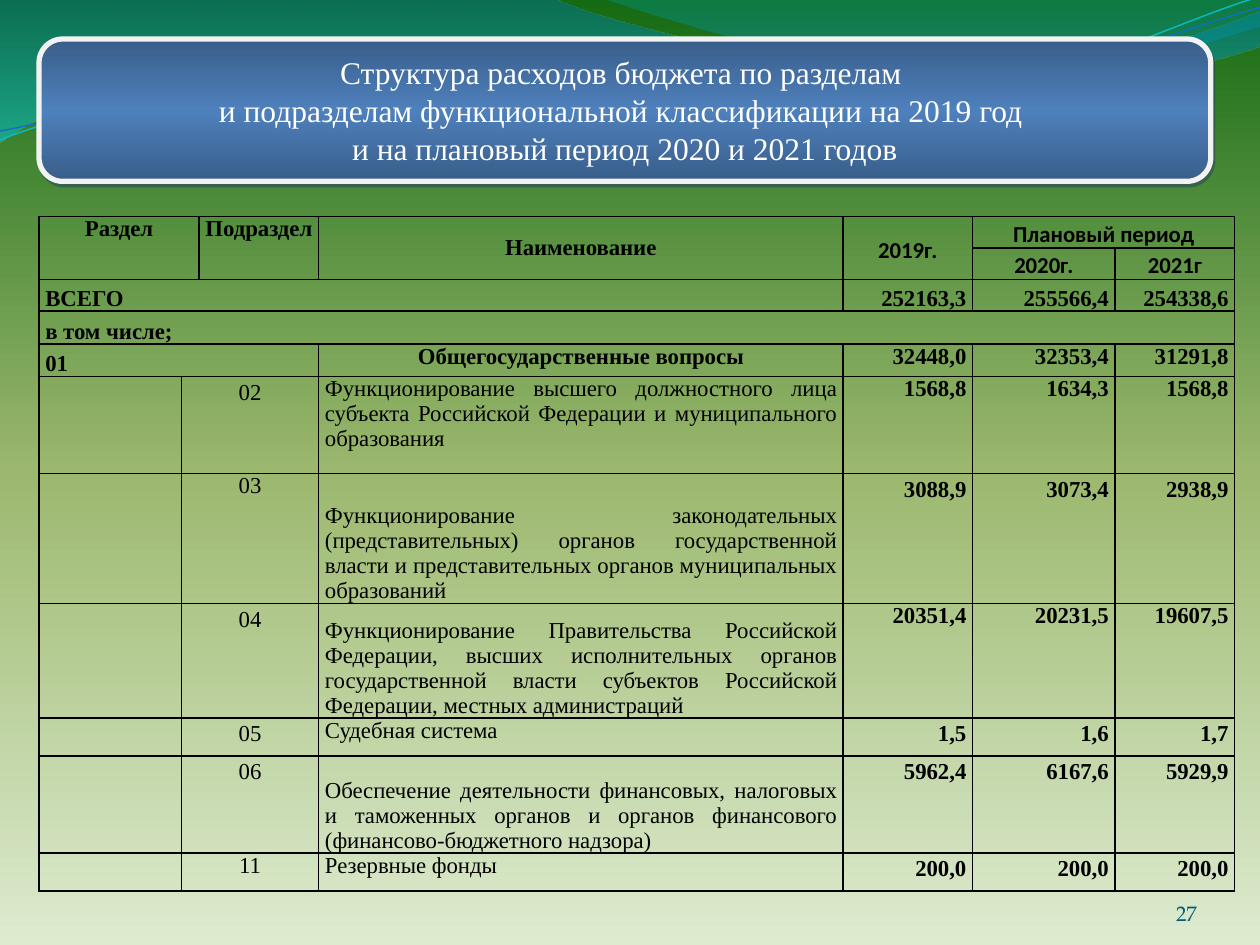
import pptx
import pptx.dml.color
import pptx.enum.shapes
import pptx.enum.text
import pptx.oxml
import pptx.oxml.ns
import pptx.util
from lxml import etree

Inches, Pt = pptx.util.Inches, pptx.util.Pt
ALIGN, ANCHOR = pptx.enum.text.PP_ALIGN, pptx.enum.text.MSO_ANCHOR
rgb = pptx.dml.color.RGBColor.from_string
qn = pptx.oxml.ns.qn
NS = pptx.oxml.ns.nsdecls("a")


def set_gradient(properties, stops, angle):
    """Replace a solid fill by a gradient; stops are (position, colour, effect, percent)."""
    marks = "".join(
        f'<a:gs pos="{pos * 1000}"><a:srgbClr val="{colour}">'
        f'<a:{effect} val="{percent * 1000}"/></a:srgbClr></a:gs>'
        for pos, colour, effect, percent in stops)
    properties.replace(properties.find(qn("a:solidFill")), pptx.oxml.parse_xml(
        f'<a:gradFill {NS} rotWithShape="1"><a:gsLst>{marks}</a:gsLst>'
        f'<a:lin ang="{angle * 60000}" scaled="0"/></a:gradFill>'))


def add_wave(segments):
    """Outline of line ends (x, y) and Bezier segments (x1, y1, x2, y2, x, y)."""
    points = [(Inches(s[i]), Inches(s[i + 1])) for s in segments for i in range(0, len(s), 2)]
    builder = slide.shapes.build_freeform(*points[0])
    builder.add_line_segments(points[1:], close=False)
    shape = builder.convert_to_shape()
    lines = iter(list(shape._element.iter(qn("a:lnTo"))))
    for segment in segments[1:]:
        first = next(lines)
        if len(segment) == 6:
            first.tag = qn("a:cubicBezTo")
            for _ in range(2):
                other = next(lines)
                first.append(other[0])
                other.getparent().remove(other)
    return shape


presentation = pptx.Presentation()
presentation.slide_width, presentation.slide_height = Inches(10), Inches(7.5)
slide = presentation.slides.add_slide(presentation.slide_layouts[6])

# Background
slide.background.fill.solid()
set_gradient(slide._element.find(".//" + qn("p:bgPr")),
             [(0, "DDEBCF", "alpha", 100), (50, "9CB86E", "alpha", 100),
              (100, "156B13", "alpha", 100)], 270)

# Waves along the top: outline, gradient stops, line colour, line width
waves = [
    ([(0, -0.01), (4.4, -0.01), (4.76, 0.17, 6.64, 0.63, 7.58, 0.63),
      (8.53, 0.63, 9.58, 0.26, 10, 0.09), (10.01, 0.36),
      (9.83, 0.44, 8.7, 0.76, 7.46, 0.75), (6.22, 0.75, 3.82, 0.28, 2.57, 0.34),
      (1.29, 0.35, 0.46, 0.83, -0.01, 1.13), (0, -0.01)],
     [(0, "0074A1", "alpha", 45), (100, "00C6CF", "alpha", 55)], None, None),
    ([(4.79, -0.01), (5.09, 0.11, 6.82, 0.62, 7.69, 0.65),
      (8.56, 0.69, 9.61, 0.32, 10, 0.21), (10, 0), (4.79, -0.01)],
     [(0, "00A1A9", "alpha", 30), (80, "008BBF", "alpha", 45)], None, None),
    ([(0, 1.11), (0.48, 0.93, 1.58, 0.57, 2.77, 0.52),
      (3.95, 0.47, 5.93, 0.89, 7.13, 0.8), (8.33, 0.71, 9.38, 0.15, 9.98, -0.02)],
     None, "0AB8BF", 0.85),
    ([(0, 1.04), (0.47, 0.96, 1.64, 0.61, 2.83, 0.56),
      (4.03, 0.51, 5.97, 0.83, 7.17, 0.75), (8.36, 0.67, 9.41, 0.21, 10, 0.06)],
     None, "0F6FC6", 0.75),
]
for outline, stops, line_colour, line_width in waves:
    wave = add_wave(outline)
    wave.shadow.inherit = False
    if stops:
        wave.fill.solid()
        set_gradient(wave._element.spPr, stops, 90)
        wave.line.fill.background()
    else:
        wave.fill.background()
        wave.line.color.rgb = rgb(line_colour)
        wave.line.width = Pt(line_width)

# Page number
page_number = slide.shapes.add_textbox(Inches(8.67), Inches(6.95), Inches(0.83), Inches(0.4))
frame = page_number.text_frame
frame.word_wrap = True
frame.vertical_anchor = ANCHOR.BOTTOM
frame.margin_left = frame.margin_right = frame.margin_top = frame.margin_bottom = 0
frame.text = "27"
number = frame.paragraphs[0]
number.alignment = ALIGN.RIGHT
number.font.size, number.font.name = Pt(12), "TeX Gyre Pagella"
number.font.color.rgb = rgb("045D75")

# Title on a rounded plate; a placeholder would be drawn with square corners
title = slide.shapes.add_shape(pptx.enum.shapes.MSO_SHAPE.FLOWCHART_ALTERNATE_PROCESS,
                               Inches(0.31), Inches(0.31), Inches(9.3), Inches(1.13))
plate = title._element.spPr
title.fill.solid()
set_gradient(plate, [(0, "4F81BD", "shade", 49), (50, "4F81BD", "shade", 100),
                     (100, "4F81BD", "shade", 49)], 90)
title.line.color.rgb = rgb("F2F2F2")
title.line.width = Pt(3)
plate.append(pptx.oxml.parse_xml(
    f'<a:effectLst {NS}><a:outerShdw dist="{Pt(2.2)}" dir="{63 * 60000}" algn="ctr" '
    'rotWithShape="0"><a:srgbClr val="243F60"><a:alpha val="50000"/></a:srgbClr>'
    '</a:outerShdw></a:effectLst>'))
title.text_frame.text = ("Структура расходов бюджета по разделам \n"
                         "и подразделам функциональной классификации на 2019 год \n"
                         "и на плановый период 2020 и 2021 годов")
title.text_frame.vertical_anchor = ANCHOR.MIDDLE
for line in title.text_frame.paragraphs:
    line.alignment = ALIGN.CENTER
    line.font.size, line.font.name = Pt(18), "Times New Roman"
    line.font.color.rgb = rgb("FFFFFF")

# Budget table
column_widths = [1.13, 0.11, 0.95, 4.16, 1.03, 1.13, 0.95]
row_heights = [0.25, 0.25, 0.25, 0.26, 0.26, 0.77, 1.03, 0.91, 0.3, 0.77, 0.3]
table_frame = slide.shapes.add_table(len(row_heights), len(column_widths), Inches(0.31),
                                     Inches(1.72), Inches(9.45), Inches(5.35))
budget = table_frame.table
budget.first_row = budget.horz_banding = False
for column, width in zip(budget.columns, column_widths):
    column.width = Inches(width)
for row, height in zip(budget.rows, row_heights):
    row.height = Inches(height)
for cell in budget.iter_cells():
    cell.margin_left = cell.margin_right = Inches(0.05)
    cell.margin_top = cell.margin_bottom = 0
    for side in ("lnL", "lnR", "lnT", "lnB"):
        border = etree.SubElement(cell._tc.get_or_add_tcPr(), qn("a:" + side), w=str(Pt(1)))
        ink = etree.SubElement(border, qn("a:solidFill"))
        etree.SubElement(ink, qn("a:srgbClr"), val="000000")
    cell.fill.background()

# Paragraph spacing: before, after, lines
PLAIN, HEADING, LOOSE = (0, 0, 1.0), (12, 3, 1.0), (0, 10, 1.15)
LEFT, CENTER, RIGHT, JUSTIFY = ALIGN.LEFT, ALIGN.CENTER, ALIGN.RIGHT, ALIGN.JUSTIFY
TOP, MIDDLE, BOTTOM = ANCHOR.TOP, ANCHOR.MIDDLE, ANCHOR.BOTTOM
SERIF, SANS = "Times New Roman", "Calibri"

# Row, column, rows spanned, columns spanned, text, alignment, anchor, spacing, font, bold
entries = [
    (0, 0, 2, 2, "Раздел", CENTER, TOP, HEADING, SERIF, True),
    (0, 2, 2, 1, "Подраздел", CENTER, TOP, HEADING, SERIF, True),
    (0, 3, 2, 1, "Наименование", CENTER, MIDDLE, HEADING, SERIF, True),
    (0, 4, 2, 1, "2019г.", CENTER, MIDDLE, LOOSE, SANS, True),
    (0, 5, 1, 2, "Плановый период", CENTER, TOP, LOOSE, SANS, True),
    (1, 5, 1, 1, "2020г.", CENTER, TOP, LOOSE, SANS, True),
    (1, 6, 1, 1, "2021г", CENTER, TOP, LOOSE, SANS, True),
    (2, 0, 1, 4, "ВСЕГО", LEFT, BOTTOM, PLAIN, SERIF, True),
    (3, 0, 1, 7, "в том числе;", LEFT, BOTTOM, PLAIN, SERIF, True),
    (4, 0, 1, 3, "01", LEFT, BOTTOM, PLAIN, SERIF, True),
    (4, 3, 1, 1, "Общегосударственные вопросы", CENTER, TOP, PLAIN, SERIF, True),
]
# Subsections: code, its spacing, name, its alignment and anchor
subsections = [
    ("02", LOOSE, "Функционирование высшего должностного лица субъекта Российской "
     "Федерации и муниципального образования", JUSTIFY, TOP),
    ("03", PLAIN, "Функционирование законодательных (представительных) органов "
     "государственной власти и представительных органов муниципальных образований",
     JUSTIFY, BOTTOM),
    ("04", LOOSE, "Функционирование Правительства Российской Федерации, высших "
     "исполнительных органов государственной власти субъектов Российской Федерации, "
     "местных администраций", JUSTIFY, BOTTOM),
    ("05", LOOSE, "Судебная система", LEFT, TOP),
    ("06", LOOSE, "Обеспечение деятельности финансовых, налоговых и таможенных органов "
     "и органов финансового (финансово-бюджетного надзора)", JUSTIFY, BOTTOM),
    ("11", PLAIN, "Резервные фонды", JUSTIFY, TOP),
]
for r, (code, spacing, name, align, anchor) in enumerate(subsections, start=5):
    entries.append((r, 1, 1, 2, code, CENTER, TOP, spacing, SERIF, False))
    entries.append((r, 3, 1, 1, name, align, anchor, PLAIN, SERIF, False))
# Amounts for 2019, 2020 and 2021, by table row
amounts = {
    2: (BOTTOM, PLAIN, "252163,3", "255566,4", "254338,6"),
    4: (TOP, PLAIN, "32448,0", "32353,4", "31291,8"),
    5: (TOP, PLAIN, "1568,8", "1634,3", "1568,8"),
    6: (TOP, LOOSE, "3088,9", "3073,4", "2938,9"),
    7: (TOP, PLAIN, "20351,4", "20231,5", "19607,5"),
    8: (TOP, LOOSE, "1,5", "1,6", "1,7"),
    9: (TOP, LOOSE, "5962,4", "6167,6", "5929,9"),
    10: (TOP, LOOSE, "200,0", "200,0", "200,0"),
}
for r, (anchor, spacing, *years) in amounts.items():
    for c, amount in enumerate(years, start=4):
        entries.append((r, c, 1, 1, amount, RIGHT, anchor, spacing, SERIF, True))

for r, c, rows, columns, text, align, anchor, spacing, font, bold in entries:
    cell = budget.cell(r, c)
    if rows * columns > 1:
        cell.merge(budget.cell(r + rows - 1, c + columns - 1))
    cell.text = text
    cell.vertical_anchor = anchor
    paragraph = cell.text_frame.paragraphs[0]
    paragraph.alignment = align
    before, after, paragraph.line_spacing = spacing
    paragraph.space_before, paragraph.space_after = Pt(before), Pt(after)
    paragraph.font.size, paragraph.font.name, paragraph.font.bold = Pt(13), font, bold
    paragraph.font.color.rgb = rgb("000000")

presentation.save("out.pptx")
